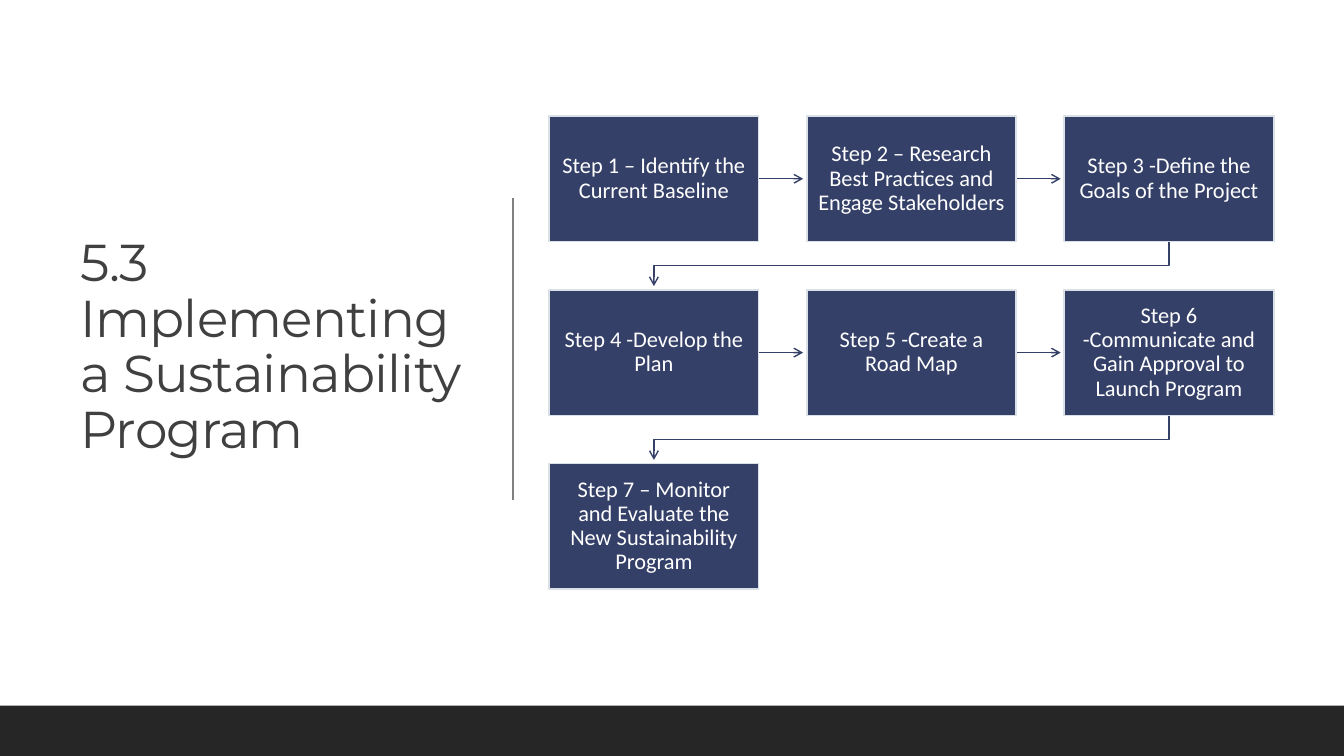
from dataclasses import dataclass

from lxml import etree
from pptx import Presentation
from pptx import util as u
from pptx.dml.color import RGBColor
from pptx.enum import shapes, text
from pptx.oxml import ns


@dataclass(frozen=True)
class Theme:
    navy: RGBColor = RGBColor(0x34, 0x40, 0x68)
    box_border: RGBColor = RGBColor(0xD9, 0xE0, 0xE6)
    title_gray: RGBColor = RGBColor(0x40, 0x40, 0x40)
    divider_gray: RGBColor = RGBColor(0x80, 0x80, 0x80)
    footer: RGBColor = RGBColor(0x26, 0x26, 0x26)
    white: RGBColor = RGBColor(0xFF, 0xFF, 0xFF)
    title_font: str = "Montserrat"
    step_font: str = "Calibri"
    title_size: int = 37
    step_size: int = 16


@dataclass(frozen=True)
class Box:
    """A rectangle in centimetres."""
    left: float
    top: float
    width: float
    height: float

    @property
    def right(self) -> float:
        return self.left + self.width

    @property
    def bottom(self) -> float:
        return self.top + self.height

    @property
    def center(self) -> float:
        return self.left + self.width / 2

    @property
    def middle(self) -> float:
        return self.top + self.height / 2

    def lengths(self) -> list[u.Length]:
        return [u.Cm(value) for value in (self.left, self.top, self.width, self.height)]


THEME = Theme()
SLIDE_WIDTH, SLIDE_HEIGHT = 33.87, 19.05
FOOTER_HEIGHT = 1.27
COLUMNS = 3
FIRST_BOX = Box(13.84, 2.92, 5.28, 3.17)
COLUMN_PITCH, ROW_PITCH = 6.49, 4.38
ARROW_CLEARANCE = 0.09
TITLE = "5.3 Implementing a Sustainability Program"
STEPS = [
    "Step 1 – Identify the Current Baseline",
    "Step 2 – Research Best Practices and Engage Stakeholders",
    "Step 3 -Define the Goals of the Project",
    "Step 4 -Develop the Plan",
    "Step 5 -Create a Road Map",
    "Step 6 -Communicate and Gain Approval to Launch Program",
    "Step 7 – Monitor and Evaluate the New Sustainability Program",
]


def step_box(index: int) -> Box:
    row, column = divmod(index, COLUMNS)
    return Box(FIRST_BOX.left + column * COLUMN_PITCH, FIRST_BOX.top + row * ROW_PITCH,
               FIRST_BOX.width, FIRST_BOX.height)


def write_text(shape, content: str, font: str, size: int, color: RGBColor,
               alignment: text.PP_ALIGN):
    """Fill the shape with one wrapped, vertically centred paragraph; return its run."""
    frame = shape.text_frame
    frame.text = content
    frame.word_wrap = True
    frame.vertical_anchor = text.MSO_ANCHOR.MIDDLE
    paragraph = frame.paragraphs[0]
    paragraph.alignment = alignment
    paragraph.line_spacing = 0.9
    run = paragraph.runs[0]
    run.font.name = font
    run.font.size = u.Pt(size)
    run.font.color.rgb = color
    return run


def add_rectangle(slide, box: Box, fill: RGBColor):
    shape = slide.shapes.add_shape(shapes.MSO_SHAPE.RECTANGLE, *box.lengths())
    shape.shadow.inherit = False
    shape.fill.solid()
    shape.fill.fore_color.rgb = fill
    shape.line.fill.background()
    return shape


def add_line(slide, start: tuple[float, float], end: tuple[float, float], color: RGBColor):
    line = slide.shapes.add_connector(shapes.MSO_CONNECTOR.STRAIGHT,
                                      *[u.Cm(value) for value in (*start, *end)])
    line.line.color.rgb = color
    line.line.width = u.Pt(1)
    etree.SubElement(line._element.spPr, ns.qn("a:effectLst"))
    return line


def add_arrowhead(shape) -> None:
    etree.SubElement(shape.line._get_or_add_ln(), ns.qn("a:tailEnd"), type="arrow")


def add_row_arrow(slide, source: Box, target: Box) -> None:
    arrow = add_line(slide, (source.right, source.middle),
                     (target.left - ARROW_CLEARANCE, target.middle), THEME.navy)
    add_arrowhead(arrow)


def add_return_arrow(slide, source: Box, target: Box) -> None:
    """Lead from the end of one row to the start of the next."""
    bend = (source.bottom + target.top) / 2
    points = [(source.center, source.bottom), (source.center, bend),
              (target.center, bend), (target.center, target.top - ARROW_CLEARANCE)]
    start, *rest = [(u.Cm(x), u.Cm(y)) for x, y in points]
    builder = slide.shapes.build_freeform(*start)
    builder.add_line_segments(rest, close=False)
    arrow = builder.convert_to_shape()
    arrow.shadow.inherit = False
    arrow.fill.background()
    arrow.line.color.rgb = THEME.navy
    arrow.line.width = u.Pt(1)
    add_arrowhead(arrow)


def add_step(slide, box: Box, content: str) -> None:
    shape = add_rectangle(slide, box, THEME.navy)
    shape.line.color.rgb = THEME.box_border
    shape.line.width = u.Pt(1.25)
    write_text(shape, content, THEME.step_font, THEME.step_size, THEME.white,
               text.PP_ALIGN.CENTER)
    frame = shape.text_frame
    frame.margin_left = frame.margin_right = u.Cm(0.25)
    frame.margin_top = frame.margin_bottom = u.Cm(0.28)


def add_title(slide) -> None:
    title = slide.shapes.add_textbox(*Box(1.78, 1.75, 10.24, 14.05).lengths())
    run = write_text(title, TITLE, THEME.title_font, THEME.title_size, THEME.title_gray,
                     text.PP_ALIGN.LEFT)
    run.font._element.set("spc", "-50")


def main() -> None:
    presentation = Presentation()
    presentation.slide_width = u.Cm(SLIDE_WIDTH)
    presentation.slide_height = u.Cm(SLIDE_HEIGHT)
    slide = presentation.slides.add_slide(presentation.slide_layouts[6])

    add_title(slide)
    add_line(slide, (12.93, 4.98), (12.93, 12.6), THEME.divider_gray)
    footer = Box(0, SLIDE_HEIGHT - FOOTER_HEIGHT, SLIDE_WIDTH, FOOTER_HEIGHT)
    add_rectangle(slide, footer, THEME.footer)

    boxes = [step_box(index) for index in range(len(STEPS))]
    for source, target in zip(boxes, boxes[1:]):
        add_arrow = add_row_arrow if source.top == target.top else add_return_arrow
        add_arrow(slide, source, target)
    for box, content in zip(boxes, STEPS):
        add_step(slide, box, content)

    presentation.save("out.pptx")


if __name__ == "__main__":
    main()
